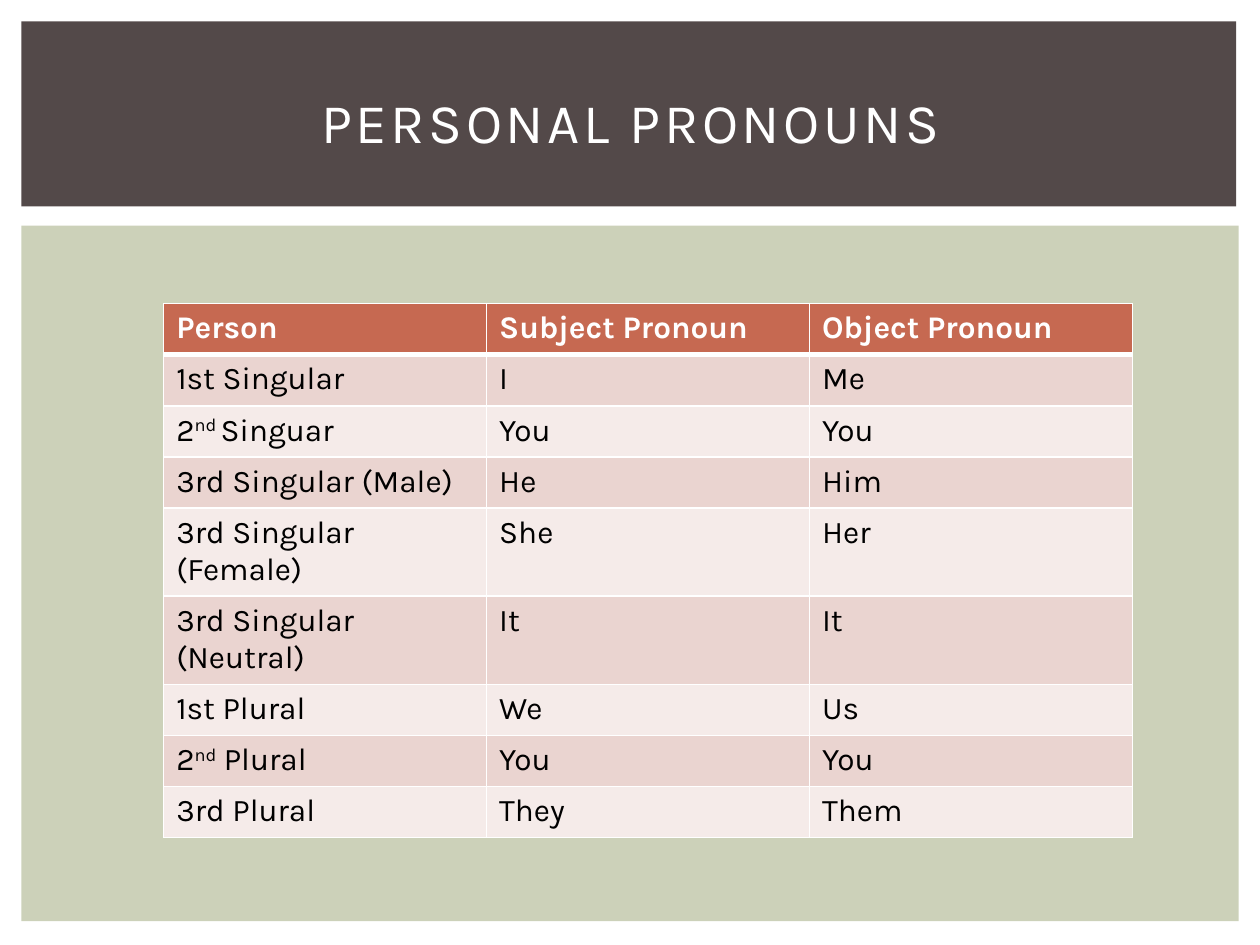
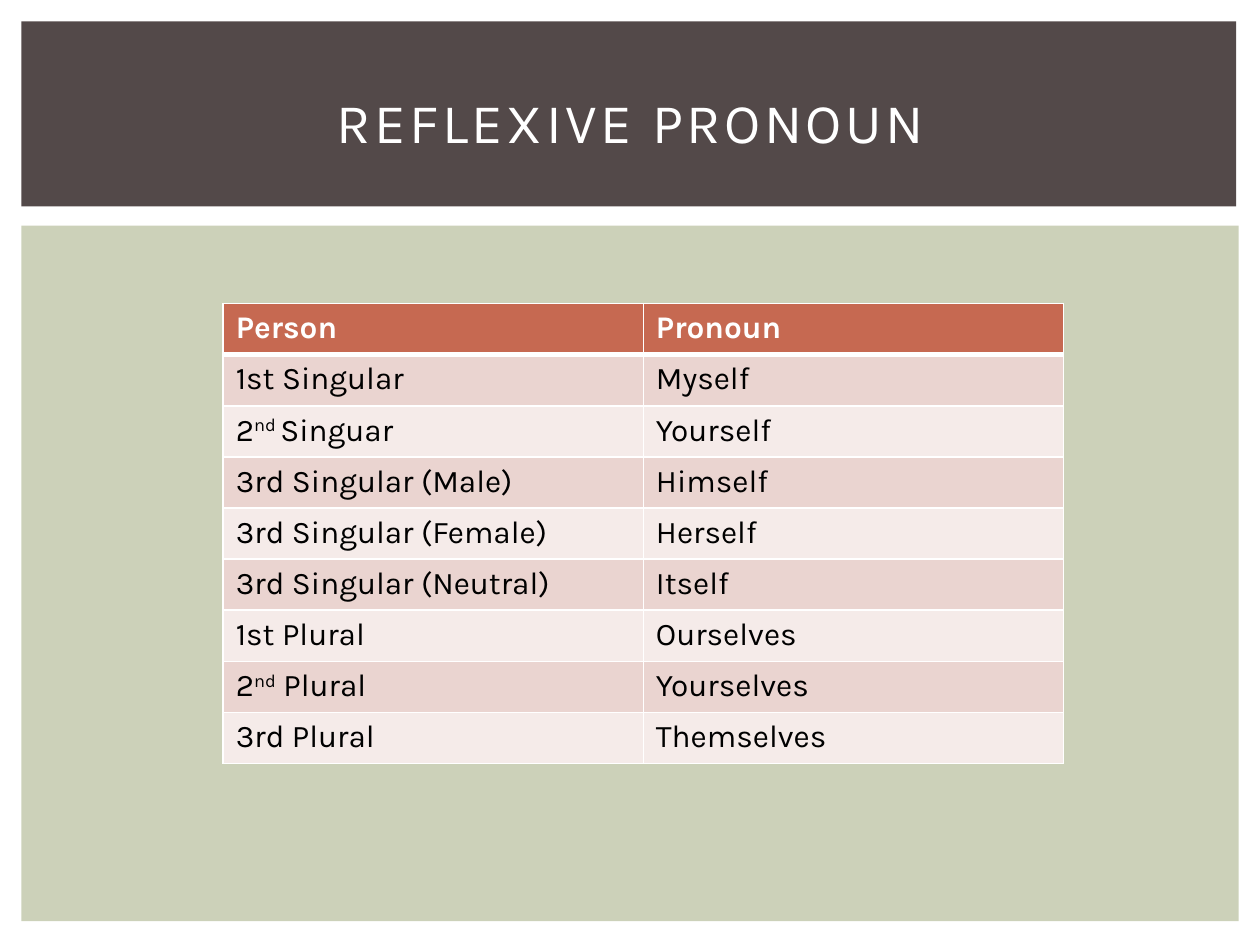
from collections import namedtuple
from dataclasses import dataclass

from lxml import etree
from pptx import Presentation
from pptx.dml.color import RGBColor
from pptx.enum.shapes import MSO_SHAPE
from pptx.enum.text import MSO_ANCHOR, PP_ALIGN
from pptx.oxml.ns import qn
from pptx.util import Cm, Pt

RECTANGLE = MSO_SHAPE.RECTANGLE
MIDDLE = MSO_ANCHOR.MIDDLE
CENTER = PP_ALIGN.CENTER

Box = namedtuple("Box", "left top width height")


@dataclass(frozen=True)
class Theme:
    """Colours, font, type sizes and line widths of the deck."""
    band: str = "534949"
    body: str = "CCD1B9"
    header: str = "C66951"
    stripes: tuple = ("EAD4D0", "F5EBE9")
    light: str = "FFFFFF"
    dark: str = "000000"
    font: str = "Karla"
    title_size: int = 32
    title_spacing: int = 2
    table_size: int = 18
    rule: int = 1
    header_rule: int = 3


THEME = Theme()
BAND = Box(0.43, 0.43, 24.49, 3.73)
BODY = Box(0.43, 4.55, 24.54, 14.02)
TITLE_INSET = (0.64, 0.56)
TITLE_SIZE = (23.29, 2.92)
TABLE_TOP = 1.57
ROW_HEIGHT = 1.03

PERSONS = ("1st Singular", "2^nd ^Singuar", "3rd Singular (Male)",
           "3rd Singular (Female)", "3rd Singular (Neutral)",
           "1st Plural", "2^nd^ Plural", "3rd Plural")
PERSONAL = {
    "Person": PERSONS,
    "Subject Pronoun": ("I", "You", "He", "She", "It", "We", "You", "They"),
    "Object Pronoun": ("Me", "You", "Him", "Her", "It", "Us", "You", "Them"),
}
REFLEXIVE = {
    "Person": PERSONS,
    "Pronoun": ("Myself", "Yourself", "Himself", "Herself", "Itself",
                "Ourselves", "Yourselves", "Themselves"),
}


def cm(*lengths):
    """Convert numbers to centimetre lengths."""
    return [Cm(n) for n in lengths]


def paint(fill, color):
    """Give a fill one solid colour."""
    fill.solid()
    fill.fore_color.rgb = RGBColor.from_string(color)


def add_run(p, text, size, color, bold=False):
    """Append a formatted run to a paragraph."""
    r = p.add_run()
    r.text = text
    formats = {"name": THEME.font, "size": Pt(size), "bold": bold}
    for name, value in formats.items():
        setattr(r.font, name, value)
    r.font.color.rgb = RGBColor.from_string(color)
    return r


def add_panel(slide, box, color):
    """Draw a plain coloured rectangle."""
    sp = slide.shapes.add_shape(RECTANGLE, *cm(*box))
    sp.shadow.inherit = False
    paint(sp.fill, color)
    sp.line.fill.background()


def add_title_band(slide, box, title):
    """Draw the dark band with its centred, letter-spaced title."""
    add_panel(slide, box, THEME.band)
    dx, dy = TITLE_INSET
    sp = slide.shapes.add_textbox(*cm(box.left + dx, box.top + dy, *TITLE_SIZE))
    tf = sp.text_frame
    for name, value in {"word_wrap": True, "vertical_anchor": MIDDLE}.items():
        setattr(tf, name, value)
    p = tf.paragraphs[0]
    p.alignment = CENTER
    r = add_run(p, title, THEME.title_size, THEME.light)
    r.font._element.set("spc", str(THEME.title_spacing * 100))


def set_borders(cell, top, bottom):
    """Rule the four sides of a cell, with widths in points."""
    widths = {"a:lnL": THEME.rule, "a:lnR": THEME.rule, "a:lnT": top, "a:lnB": bottom}
    tcPr = cell._tc.get_or_add_tcPr()
    for i, (tag, width) in enumerate(widths.items()):
        ln = etree.Element(qn(tag), w=str(Pt(width)))
        fill = etree.SubElement(ln, qn("a:solidFill"))
        etree.SubElement(fill, qn("a:srgbClr"), val=THEME.light)
        tcPr.insert(i, ln)


def fill_cell(cell, row, text):
    """Write and style a cell; text between carets is superscript."""
    is_header = row == 0
    paint(cell.fill, THEME.header if is_header else THEME.stripes[(row - 1) % 2])
    set_borders(cell,
                THEME.header_rule if row == 1 else THEME.rule,
                THEME.header_rule if is_header else THEME.rule)
    color = THEME.light if is_header else THEME.dark
    for i, part in enumerate(text.split("^")):
        r = add_run(cell.text_frame.paragraphs[0], part, THEME.table_size, color, is_header)
        if i % 2:
            r.font._element.set("baseline", "30000")


def add_pronoun_table(slide, box, columns, inset, column_width):
    """Place a table of equal columns inside the body box."""
    rows = list(zip(*((head, *values) for head, values in columns.items())))
    table = slide.shapes.add_table(
        len(rows), len(columns),
        *cm(box.left + inset, box.top + TABLE_TOP,
            column_width * len(columns), ROW_HEIGHT * len(rows))).table
    for column in table.columns:
        column.width = Cm(column_width)
    for i, texts in enumerate(rows):
        table.rows[i].height = Cm(ROW_HEIGHT)
        for j, text in enumerate(texts):
            fill_cell(table.cell(i, j), i, text)


def add_pronoun_slide(prs, title, columns, inset, column_width):
    """Add a slide with a title band above a pronoun table."""
    slide = prs.slides.add_slide(prs.slide_layouts[6])
    paint(slide.background.fill, THEME.light)
    add_panel(slide, BODY, THEME.body)
    add_title_band(slide, BAND, title)
    add_pronoun_table(slide, BODY, columns, inset, column_width)


def main():
    """Build and save the deck."""
    prs = Presentation()
    prs.slide_width, prs.slide_height = cm(25.4, 19.05)
    add_pronoun_slide(prs, "PERSONAL PRONOUNS", PERSONAL, 2.87, 6.51)
    add_pronoun_slide(prs, "REFLEXIVE PRONOUN", REFLEXIVE, 4.07, 8.47)
    prs.save("out.pptx")


if __name__ == "__main__":
    main()
